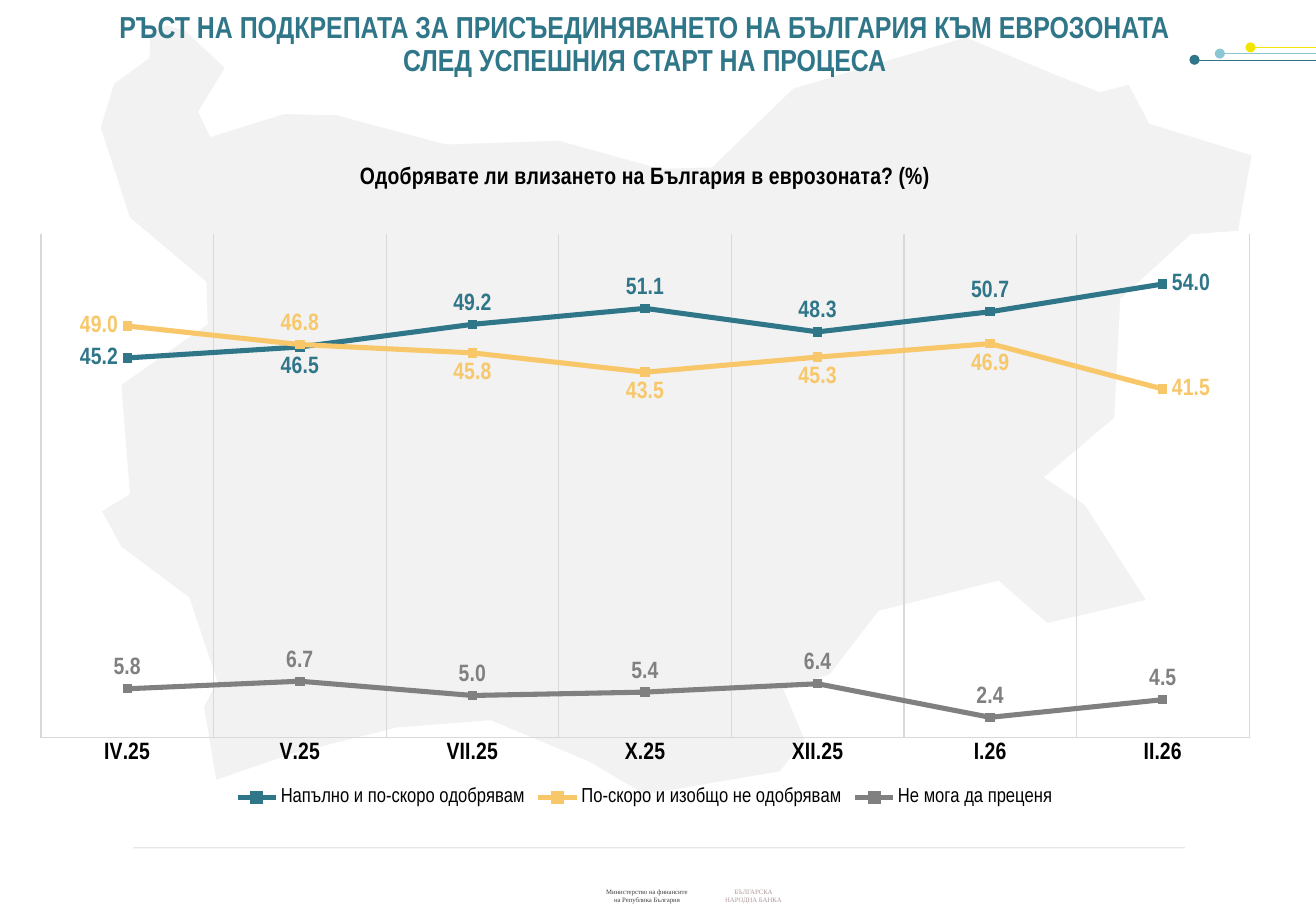
from lxml.etree import SubElement
from pptx import Presentation
from pptx.chart.data import CategoryChartData
from pptx.dml.color import RGBColor
from pptx.enum.chart import XL_CHART_TYPE, XL_LABEL_POSITION, XL_LEGEND_POSITION, XL_MARKER_STYLE, XL_TICK_MARK
from pptx.enum.shapes import MSO_CONNECTOR
from pptx.enum.text import MSO_ANCHOR, PP_ALIGN
from pptx.oxml import parse_xml
from pptx.oxml.ns import nsdecls, qn
from pptx.util import Cm, Pt

COLORS = {
    "teal": "307689", "sky": "8AC7D3", "yellow": "F2E404", "amber": "F7C76A",
    "gray": "808080", "rule": "A6A6A6", "grid": "D9D9D9", "map": "F2F2F2",
    "ministry": "404040", "bank": "AF9A9A", "black": "000000",
}
FONT = "Arial Narrow"
OUTLINE_UNIT = Cm(0.0254)
BULGARIA = [
    (124, 26), (138, 21), (153, 26), (185, 56), (163, 92), (173, 113), (234, 94), (277, 95),
    (367, 119), (460, 116), (543, 139), (586, 138), (653, 73), (795, 31), (867, 61), (905, 76),
    (929, 70), (946, 102), (1030, 128), (1019, 190), (980, 193), (922, 246), (917, 344),
    (859, 393), (893, 416), (943, 494), (862, 513), (822, 478), (723, 503), (683, 555),
    (645, 568), (662, 609), (642, 635), (531, 654), (485, 627), (404, 593), (326, 599),
    (239, 621), (178, 642), (168, 582), (179, 561), (156, 492), (100, 450), (84, 421),
    (107, 407), (100, 317), (171, 267), (170, 232), (107, 179), (83, 105), (94, 69), (123, 48),
]
MONTHS = ["IV.25", "V.25", "VII.25", "X.25", "XII.25", "I.26", "II.26"]
LEFT, RIGHT = XL_LABEL_POSITION.LEFT, XL_LABEL_POSITION.RIGHT
ABOVE, BELOW = XL_LABEL_POSITION.ABOVE, XL_LABEL_POSITION.BELOW
OPINIONS = [
    ("Напълно и по-скоро одобрявам", "teal", [45.2, 46.5, 49.2, 51.1, 48.3, 50.7, 54.0],
     [LEFT, BELOW, ABOVE, ABOVE, ABOVE, ABOVE, RIGHT]),
    ("По-скоро и изобщо не одобрявам", "amber", [49.0, 46.8, 45.8, 43.5, 45.3, 46.9, 41.5],
     [LEFT, ABOVE, BELOW, BELOW, BELOW, BELOW, RIGHT]),
    ("Не мога да преценя", "gray", [5.8, 6.7, 5.0, 5.4, 6.4, 2.4, 4.5], [ABOVE] * len(MONTHS)),
]


def rgb(name):
    return RGBColor.from_string(COLORS[name])


def style_font(font, size, color="black", bold=False, name=FONT):
    font.name, font.size, font.bold = name, Pt(size), bold
    font.color.rgb = rgb(color)


def set_layout(element, index, target=None, **fractions):
    current = element.find(qn("c:layout"))
    if current is not None:
        element.remove(current)
    layout = parse_xml(f"<c:layout {nsdecls('c')}><c:manualLayout/></c:layout>")
    manual = layout[0]
    if target:
        SubElement(manual, qn("c:layoutTarget")).set("val", target)
    for axis in ("x", "y"):
        SubElement(manual, qn(f"c:{axis}Mode")).set("val", "edge")
    for key, value in fractions.items():
        SubElement(manual, qn(f"c:{key}")).set("val", str(value))
    element.insert(index, layout)


class SurveySlide:
    def __init__(self, presentation):
        self.slide = presentation.slides.add_slide(presentation.slide_layouts[5])
        self.shapes = self.slide.shapes

    def line(self, start, end, color, dot=False, alpha=None):
        connector = self.shapes.add_connector(
            MSO_CONNECTOR.STRAIGHT, *(Cm(value) for value in start + end))
        connector.line.width = Pt(0.25)
        connector.line.color.rgb = rgb(color)
        properties = connector.element.spPr
        outline = properties.find(qn("a:ln"))
        if alpha:
            SubElement(outline.find(".//" + qn("a:srgbClr")), qn("a:alpha")).set("val", str(alpha * 1000))
        if dot:
            SubElement(outline, qn("a:headEnd")).set("type", "oval")
        SubElement(properties, qn("a:effectLst"))

    def outline(self, points, color):
        builder = self.shapes.build_freeform(*points[0], scale=OUTLINE_UNIT)
        builder.add_line_segments(points[1:], close=True)
        country = builder.convert_to_shape()
        country.shadow.inherit = False
        country.fill.solid()
        country.fill.fore_color.rgb = rgb(color)
        country.line.fill.background()

    def caption(self, left, width, text, color):
        box = self.shapes.add_textbox(Cm(left), Cm(18.44), Cm(width), Cm(0.61))
        box.text_frame.word_wrap = True
        paragraph = box.text_frame.paragraphs[0]
        paragraph.text, paragraph.alignment = text, PP_ALIGN.CENTER
        style_font(paragraph.font, 4, color, name="Times New Roman")

    def title(self, text):
        heading = self.shapes.title
        heading.element.getparent().append(heading.element)
        heading.left, heading.top, heading.width, heading.height = Cm(1.63), Cm(0.13), Cm(23.7), Cm(1.22)
        frame = heading.text_frame
        frame.word_wrap, frame.vertical_anchor = True, MSO_ANCHOR.TOP
        frame.margin_left = frame.margin_right = Cm(0.5)
        paragraph = frame.paragraphs[0]
        paragraph.text, paragraph.alignment, paragraph.line_spacing = text, PP_ALIGN.CENTER, 0.9
        style_font(paragraph.font, 18, "teal", True)

    def line_chart(self, question, categories, opinions):
        data = CategoryChartData(number_format="0.0")
        data.categories = categories
        for name, _, values, _ in opinions:
            data.add_series(name, values)
        chart = self.shapes.add_chart(
            XL_CHART_TYPE.LINE_MARKERS, Cm(0.33), Cm(2.92), Cm(26.31), Cm(14.05), data).chart
        style_font(chart.font, 14)
        chart.has_title = True
        heading = chart.chart_title.text_frame.paragraphs[0]
        heading.text = question
        style_font(heading.font, 14, bold=True)
        set_layout(chart.chart_title._element, 1, x=0.27, y=0.03)
        chart.has_legend = True
        chart.legend.position = XL_LEGEND_POSITION.BOTTOM
        chart.legend.include_in_layout = False
        style_font(chart.legend.font, 12)

        months, percent = chart.category_axis, chart.value_axis
        months.major_tick_mark = XL_TICK_MARK.NONE
        months.has_major_gridlines = True
        for rule in (months.format.line, months.major_gridlines.format.line):
            rule.width, rule.color.rgb = Pt(0.75), rgb("grid")
        style_font(months.tick_labels.font, 14, bold=True)
        percent.minimum_scale, percent.maximum_scale = 0, 60
        percent.has_major_gridlines = percent.visible = False

        plot = chart.plots[0]
        plot.vary_by_categories = False
        set_layout(plot._element.getparent(), 0, "inner", x=0.02, y=0.14, w=0.96, h=0.75)
        for series, (_, color, _, positions) in zip(plot.series, opinions):
            self.style_series(series, color, positions)

    def style_series(self, series, color, positions):
        series.smooth = False
        series.format.line.width, series.format.line.color.rgb = Pt(3), rgb(color)
        marker = series.marker
        marker.style, marker.size = XL_MARKER_STYLE.SQUARE, 5
        marker.format.fill.solid()
        marker.format.fill.fore_color.rgb = marker.format.line.color.rgb = rgb(color)
        labels = series.data_labels
        labels.show_value, labels.position = True, ABOVE
        labels.number_format, labels.number_format_is_linked = "0.0", False
        style_font(labels.font, 14, color, True)
        for index, position in enumerate(positions):
            if position != ABOVE:
                label = series.points[index].data_label
                style_font(label.font, 14, color, True)
                label.position = position


def main():
    presentation = Presentation()
    presentation.slide_width, presentation.slide_height = Cm(27.51), Cm(19.05)
    survey = SurveySlide(presentation)
    for left, top, color in ((24.97, 1.25, "teal"), (26.14, 0.99, "yellow"), (25.5, 1.12, "sky")):
        survey.line((left, top), (27.51, top), color, dot=True)
    survey.line((2.79, 17.73), (24.77, 17.73), "rule", alpha=74)
    survey.outline(BULGARIA, "map")
    survey.caption(12.37, 2.31, "Министерство на финансите на Република България", "ministry")
    survey.caption(14.86, 1.78, "БЪЛГАРСКА НАРОДНА БАНКА", "bank")
    survey.title("РЪСТ НА ПОДКРЕПАТА ЗА ПРИСЪЕДИНЯВАНЕТО НА БЪЛГАРИЯ КЪМ ЕВРОЗОНАТА "
                 "СЛЕД УСПЕШНИЯ СТАРТ НА ПРОЦЕСА")
    survey.line_chart("Одобрявате ли влизането на България в еврозоната? (%)", MONTHS, OPINIONS)
    presentation.save("out.pptx")


if __name__ == "__main__":
    main()
